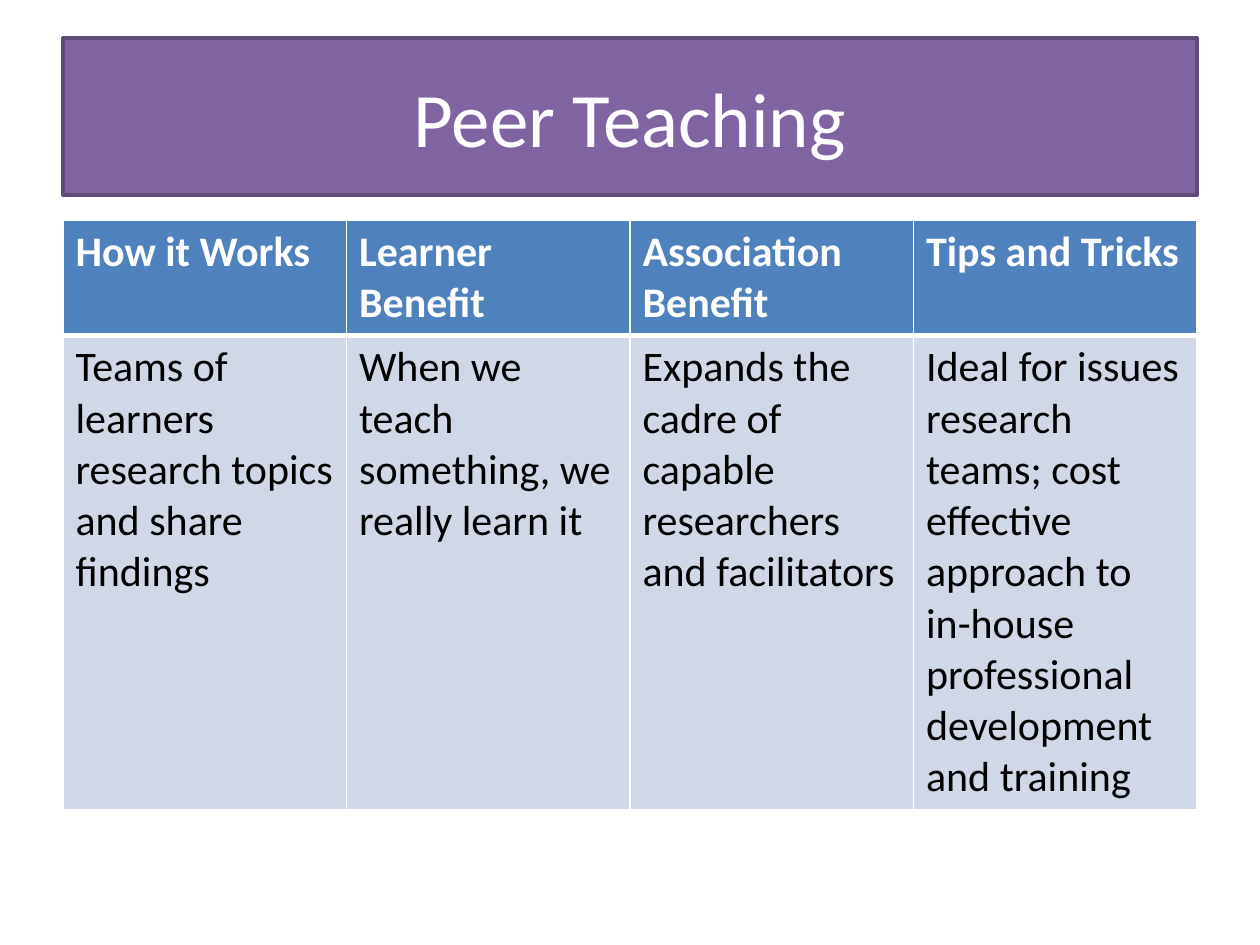
import pptx
import pptx.util
from lxml import etree
from pptx.dml.color import RGBColor
from pptx.enum.shapes import MSO_SHAPE
from pptx.enum.text import MSO_ANCHOR, PP_ALIGN
from pptx.oxml.ns import qn
from pptx.util import Inches

TITLE = "Peer Teaching"
COLUMNS = [
    ("How it Works", "Teams of learners research topics and share findings"),
    ("Learner Benefit", "When we teach something, we really learn it"),
    ("Association Benefit", "Expands the cadre of capable researchers and facilitators"),
    ("Tips and Tricks", "Ideal for issues research teams; cost effective approach to "
                        "in-house professional development and training"),
]

FONT = "Calibri"
WHITE = RGBColor(0xFF, 0xFF, 0xFF)
BLACK = RGBColor(0x00, 0x00, 0x00)
PURPLE = RGBColor(0x80, 0x64, 0xA2)
DARK_PURPLE = RGBColor(0x5F, 0x4A, 0x78)
BLUE = RGBColor(0x4F, 0x81, 0xBD)
PALE_BLUE = RGBColor(0xD0, 0xD8, 0xE8)

LEFT, WIDTH = 0.5, 9
ROWS = [
    {"height": 0.9, "fill": BLUE, "color": WHITE, "bold": True,
     "borders": {"lnL": 1, "lnR": 1, "lnT": 1, "lnB": 3}},
    {"height": 3.7, "fill": PALE_BLUE, "color": BLACK, "bold": False,
     "borders": {"lnL": 1, "lnR": 1, "lnT": 3, "lnB": 1}},
]


def write_text(text_frame, text, size, color, bold=False, align=PP_ALIGN.LEFT):
    text_frame.word_wrap = True
    paragraph = text_frame.paragraphs[0]
    paragraph.alignment = align
    run = paragraph.add_run()
    run.text = text
    run.font.name = FONT
    run.font.size = pptx.util.Pt(size)
    run.font.bold = bold
    run.font.color.rgb = color


def set_borders(cell, borders):
    properties = cell._tc.get_or_add_tcPr()
    for side, width in borders.items():
        line = etree.SubElement(properties, qn(f"a:{side}"), w=str(pptx.util.Pt(width)))
        fill = etree.SubElement(line, qn("a:solidFill"))
        etree.SubElement(fill, qn("a:srgbClr"), val=str(WHITE))


def add_banner(slide):
    banner = slide.shapes.add_shape(
        MSO_SHAPE.RECTANGLE, Inches(LEFT), Inches(0.3), Inches(WIDTH), Inches(1.25))
    banner.shadow.inherit = False
    banner.fill.solid()
    banner.fill.fore_color.rgb = PURPLE
    banner.line.color.rgb = DARK_PURPLE
    banner.line.width = pptx.util.Pt(2)
    banner.text_frame.vertical_anchor = MSO_ANCHOR.MIDDLE
    write_text(banner.text_frame, TITLE, size=44, color=WHITE, align=PP_ALIGN.CENTER)


def add_benefits_table(slide):
    height = sum(row["height"] for row in ROWS)
    table = slide.shapes.add_table(
        len(ROWS), len(COLUMNS),
        Inches(LEFT), Inches(1.75), Inches(WIDTH), Inches(height)).table
    for row_index, row in enumerate(ROWS):
        table.rows[row_index].height = Inches(row["height"])
        for column_index, texts in enumerate(COLUMNS):
            cell = table.cell(row_index, column_index)
            set_borders(cell, row["borders"])
            cell.fill.solid()
            cell.fill.fore_color.rgb = row["fill"]
            write_text(cell.text_frame, texts[row_index], size=24,
                       color=row["color"], bold=row["bold"])


def main():
    presentation = pptx.Presentation()
    presentation.slide_width = Inches(10)
    presentation.slide_height = Inches(7.5)
    slide = presentation.slides.add_slide(presentation.slide_layouts[6])
    add_banner(slide)
    add_benefits_table(slide)
    presentation.save("out.pptx")


if __name__ == "__main__":
    main()
